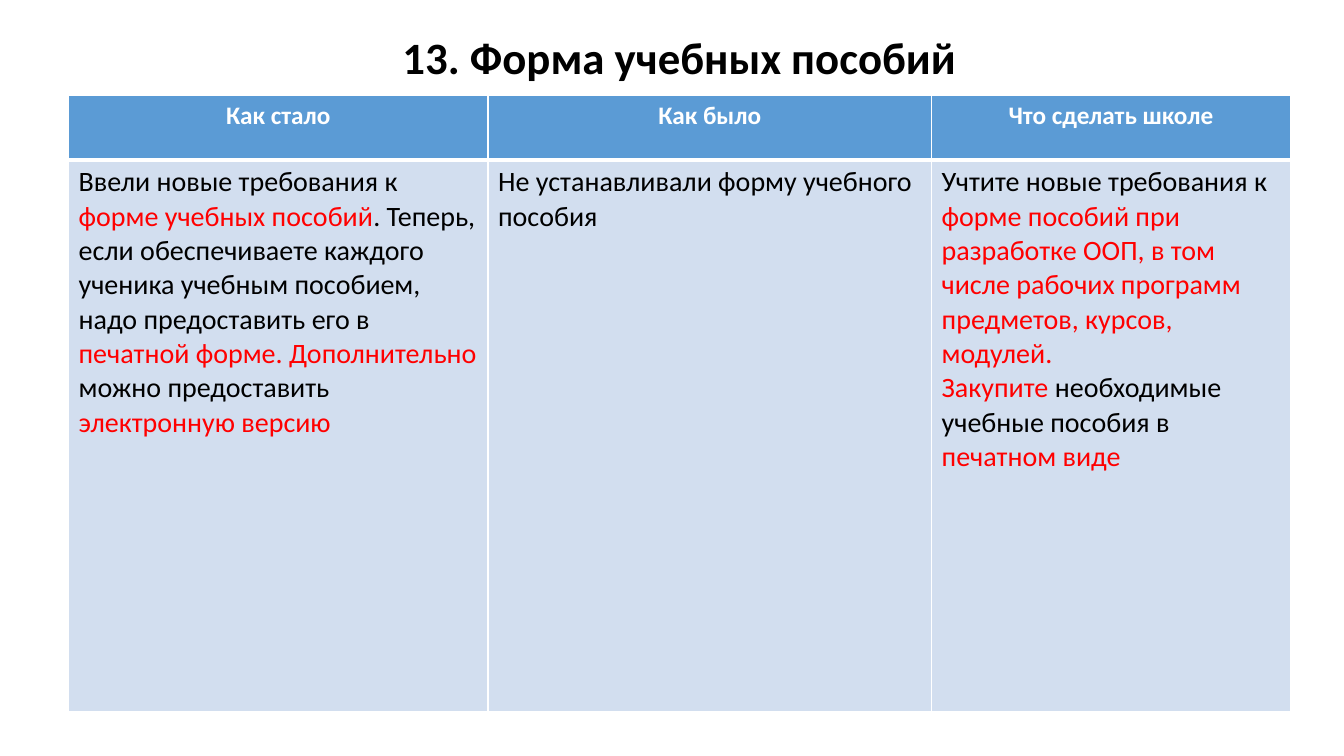
import pptx
import pptx.dml.color
import pptx.enum.text
import pptx.oxml
import pptx.oxml.ns
import pptx.util
from pptx.util import Inches

BLACK, WHITE, RED = "000000", "FFFFFF", "FF0000"
HEADER_FILL, BODY_FILL = "5B9BD5", "D2DEEF"
LEFT = pptx.enum.text.PP_ALIGN.LEFT
CENTER = pptx.enum.text.PP_ALIGN.CENTER

COLUMN_WIDTHS = [4.16, 4.4, 3.56]
ROW_HEIGHTS = [0.64, 5.47]
HEADERS = ["Как стало", "Как было", "Что сделать школе"]
# Each cell is a list of paragraphs, each paragraph a list of (text, colour).
BODY = [
    [[("Ввели новые требования к ", BLACK),
      ("форме учебных пособий", RED),
      (". Теперь, если обеспечиваете каждого ученика учебным пособием, "
       "надо предоставить его в ", BLACK),
      ("печатной форме. Дополнительно", RED),
      (" можно предоставить ", BLACK),
      ("электронную версию", RED)]],
    [[("Не устанавливали форму учебного пособия", BLACK)]],
    [[("Учтите новые требования к ", BLACK),
      ("форме пособий при разработке ООП, в том числе рабочих программ "
       "предметов, курсов, модулей.", RED)],
     [("Закупите ", RED),
      ("необходимые учебные пособия в ", BLACK),
      ("печатном виде", RED)]],
]


def rgb(value):
    return pptx.dml.color.RGBColor.from_string(value)


def write_text(frame, paragraphs, size, bold=False, align=LEFT, spacing=None):
    """Fill a text frame with paragraphs of (text, colour) spans."""
    for index, spans in enumerate(paragraphs):
        para = frame.add_paragraph() if index else frame.paragraphs[0]
        para.alignment = align
        if spacing:
            para.line_spacing = spacing
        for text, color in spans:
            span = para.add_run()
            span.text = text
            span.font.name = "Calibri"
            span.font.size = pptx.util.Pt(size)
            span.font.bold = bold
            span.font.color.rgb = rgb(color)


def set_borders(cell, top=1, bottom=1):
    """Draw white borders; widths are in points."""
    properties = cell._tc.get_or_add_tcPr()
    widths = {"lnL": 1, "lnR": 1, "lnT": top, "lnB": bottom}
    for position, (side, width) in enumerate(widths.items()):
        line = pptx.oxml.parse_xml(
            f'<a:{side} {pptx.oxml.ns.nsdecls("a")} w="{pptx.util.Pt(width)}">'
            f'<a:solidFill><a:srgbClr val="{WHITE}"/></a:solidFill></a:{side}>')
        properties.insert(position, line)


def fill_cell(cell, color):
    cell.fill.solid()
    cell.fill.fore_color.rgb = rgb(color)


def add_title(page, text):
    box = page.shapes.add_textbox(
        Inches(0.99), Inches(0.08), Inches(11.5), Inches(1.04))
    frame = box.text_frame
    frame.word_wrap = True
    frame.vertical_anchor = pptx.enum.text.MSO_ANCHOR.MIDDLE
    write_text(frame, [[(text, BLACK)]], 32, bold=True, align=CENTER,
               spacing=0.9)


def add_comparison_table(page):
    table = page.shapes.add_table(
        len(ROW_HEIGHTS), len(COLUMN_WIDTHS), Inches(0.68), Inches(0.95),
        Inches(sum(COLUMN_WIDTHS)), Inches(sum(ROW_HEIGHTS))).table
    for row, height in zip(table.rows, ROW_HEIGHTS):
        row.height = Inches(height)
    for index, width in enumerate(COLUMN_WIDTHS):
        table.columns[index].width = Inches(width)
        header, body = table.cell(0, index), table.cell(1, index)
        fill_cell(header, HEADER_FILL)
        set_borders(header, bottom=3)
        write_text(header.text_frame, [[(HEADERS[index], WHITE)]], 18,
                   bold=True, align=CENTER)
        fill_cell(body, BODY_FILL)
        set_borders(body, top=3)
        write_text(body.text_frame, BODY[index], 20)


def main():
    deck = pptx.Presentation()
    deck.slide_width, deck.slide_height = Inches(13.33), Inches(7.5)
    page = deck.slides.add_slide(deck.slide_layouts[6])
    add_title(page, "13. Форма учебных пособий")
    add_comparison_table(page)
    deck.save("out.pptx")


if __name__ == "__main__":
    main()
